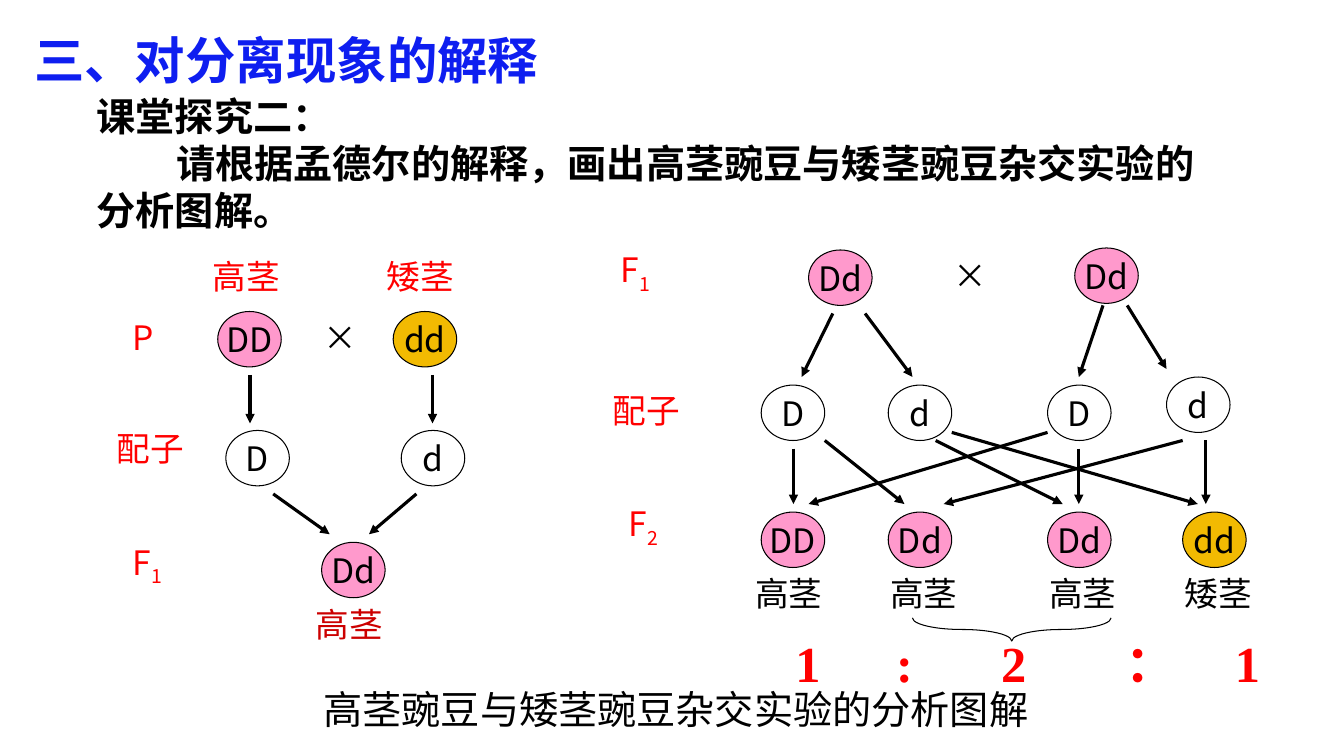
import pptx
import pptx.util
import pptx.dml.color
import pptx.enum.shapes
import pptx.enum.text
import pptx.oxml.ns
from lxml import etree
from pptx.util import Inches

SANS = "Noto Sans CJK SC"
SERIF = "Times New Roman"
BLACK, RED, DARK_RED, BLUE = "000000", "FF0000", "CC0000", "0E1EF0"
PINK, GOLD = "FF99CC", "F2BA02"
CIRCLE_WIDTH, CIRCLE_HEIGHT = 0.63, 0.55

# Genotype, left, top, fill
PLANTS = [
    ("DD", 2.16, 3.09, PINK), ("dd", 3.9, 3.09, GOLD),
    ("D", 2.24, 4.27, None), ("d", 3.98, 4.27, None),
    ("Dd", 3.19, 5.38, PINK),
    ("Dd", 8.02, 2.48, PINK), ("Dd", 10.66, 2.46, PINK),
    ("D", 7.55, 3.82, None), ("d", 8.81, 3.82, None),
    ("D", 10.39, 3.82, None), ("d", 11.57, 3.74, None),
    ("DD", 7.55, 5.08, PINK), ("Dd", 8.81, 5.08, PINK),
    ("Dd", 10.39, 5.08, PINK), ("dd", 11.73, 5.08, GOLD),
]

# Start x, start y, end x, end y
ARROWS = [
    (2.48, 3.72, 2.48, 4.2), (4.29, 3.72, 4.29, 4.2),
    (2.71, 4.9, 3.27, 5.3), (4.13, 4.9, 3.66, 5.3),
    (8.26, 3.11, 7.95, 3.74), (8.58, 3.11, 9.05, 3.74),
    (10.94, 3.03, 10.7, 3.74), (11.18, 3.03, 11.57, 3.66),
    (7.87, 4.45, 7.87, 5), (10.39, 4.29, 8.02, 5),
    (8.18, 4.37, 8.97, 5), (11.73, 4.37, 9.36, 5),
    (9.28, 4.37, 10.54, 5), (10.7, 4.45, 10.7, 5),
    (9.44, 4.29, 11.88, 5), (11.96, 4.37, 11.96, 5),
]

# Text, subscript, left, top, width, colour
LABELS = [
    ("高茎", "", 2.01, 2.49, 0.87, RED), ("矮茎", "", 3.74, 2.49, 0.87, RED),
    ("P", "", 1.22, 3.09, 0.41, RED), ("×", "", 3.11, 3.09, 0.45, BLACK),
    ("配子", "", 1.06, 4.2, 0.87, RED), ("F", "1", 1.22, 5.38, 0.51, RED),
    ("高茎", "", 3.03, 5.94, 0.88, DARK_RED),
    ("F", "1", 6.06, 2.48, 0.53, RED), ("×", "", 9.36, 2.48, 0.45, BLACK),
    ("配子", "", 5.98, 3.82, 0.88, RED), ("F", "2", 6.14, 5, 0.53, RED),
    ("高茎", "", 7.39, 5.63, 0.87, BLACK), ("高茎", "", 8.73, 5.63, 0.87, BLACK),
    ("高茎", "", 10.31, 5.63, 0.87, BLACK), ("矮茎", "", 11.65, 5.63, 0.87, BLACK),
]

TITLE = "三、对分离现象的解释"
TASK = ["课堂探究二：", "请根据孟德尔的解释，画出高茎豌豆与矮茎豌豆杂交实验的分析图解。"]
CAPTION = "高茎豌豆与矮茎豌豆杂交实验的分析图解"
RATIO = ["1", ":", "2", "：", "1"]
RATIO_STOPS = [1.0, 2.04, 3.27, 4.36]


def colour(value):
    return pptx.dml.color.RGBColor.from_string(value)


def add_child(parent, tag, **attributes):
    child = etree.SubElement(parent, pptx.oxml.ns.qn(tag))
    for name, value in attributes.items():
        child.set(name, str(value))
    return child


def add_span(para, text, size, ink, bold=False, face=SANS):
    span = para.add_run()
    span.text = text
    span.font.size = pptx.util.Pt(size)
    span.font.bold = bold
    span.font.color.rgb = colour(ink)
    span.font.name = face
    add_child(span.font._element, "a:ea", typeface=SANS)
    para.line_spacing = pptx.util.Pt(size * 1.2)
    return span


def add_box(page, left, top, width, height, wrap=True):
    box = page.shapes.add_textbox(Inches(left), Inches(top), Inches(width), Inches(height))
    box.text_frame.word_wrap = wrap
    return box.text_frame


def add_outline(page, kind, left, top, width, height, fill=None):
    """Add a preset shape with a thin black line and an optional fill."""
    shape = page.shapes.add_shape(kind, Inches(left), Inches(top), Inches(width), Inches(height))
    shape.shadow.inherit = False
    if fill:
        shape.fill.solid()
        shape.fill.fore_color.rgb = colour(fill)
    else:
        shape.fill.background()
    shape.line.color.rgb = colour(BLACK)
    shape.line.width = pptx.util.Pt(0.75)
    return shape


def add_plant(page, genotype, left, top, fill):
    circle = add_outline(page, pptx.enum.shapes.MSO_SHAPE.OVAL, left, top,
                         CIRCLE_WIDTH, CIRCLE_HEIGHT, fill)
    frame = circle.text_frame
    frame.word_wrap = False
    frame.vertical_anchor = pptx.enum.text.MSO_ANCHOR.MIDDLE
    para = frame.paragraphs[0]
    para.alignment = pptx.enum.text.PP_ALIGN.CENTER
    add_span(para, genotype, 24, BLACK)


def add_arrow(page, *ends):
    arrow = page.shapes.add_connector(pptx.enum.shapes.MSO_CONNECTOR.STRAIGHT,
                                      *[Inches(end) for end in ends])
    arrow.line.color.rgb = colour(BLACK)
    arrow.line.width = pptx.util.Pt(2.25)
    add_child(arrow.line._get_or_add_ln(), "a:tailEnd", type="triangle")
    add_child(arrow._element.spPr, "a:effectLst")


def add_label(page, text, subscript, left, top, width, ink):
    para = add_box(page, left, top, width, 0.5, wrap=False).paragraphs[0]
    add_span(para, text, 24, ink)
    if subscript:
        add_span(para, subscript, 24, ink).font._element.set("baseline", "-25000")


def add_ratio(page):
    para = add_box(page, 7.79, 6.22, 5.5, 0.71).paragraphs[0]
    add_span(para, "\t".join(RATIO), 36, RED, True, SERIF)
    stops = add_child(para._p.get_or_add_pPr(), "a:tabLst")
    for stop in RATIO_STOPS:
        add_child(stops, "a:tab", pos=Inches(stop), algn="l")


def add_task(page):
    frame = add_box(page, 0.86, 0.87, 11.24, 1.51)
    add_span(frame.paragraphs[0], TASK[0], 28, BLACK, True)
    para = frame.add_paragraph()
    add_span(para, TASK[1], 28, BLACK, True)
    para._p.get_or_add_pPr().set("indent", str(Inches(0.79)))


def main():
    deck = pptx.Presentation()
    deck.slide_width, deck.slide_height = Inches(13.33), Inches(7.5)
    page = deck.slides.add_slide(deck.slide_layouts[6])
    for plant in PLANTS:
        add_plant(page, *plant)
    for arrow in ARROWS:
        add_arrow(page, *arrow)
    for label in LABELS:
        add_label(page, *label)
    add_ratio(page)
    brace = add_outline(page, pptx.enum.shapes.MSO_SHAPE.LEFT_BRACE, 9.92, 5.26, 0.23, 1.97)
    brace.rotation = 270
    brace.adjustments[0] = 3.23
    add_task(page)
    add_span(add_box(page, 0.24, 0.24, 6.12, 0.71).paragraphs[0], TITLE, 36, BLUE, True)
    add_span(add_box(page, 3.11, 6.75, 8.4, 0.57).paragraphs[0], CAPTION, 28, BLACK)
    deck.save("out.pptx")


if __name__ == "__main__":
    main()
